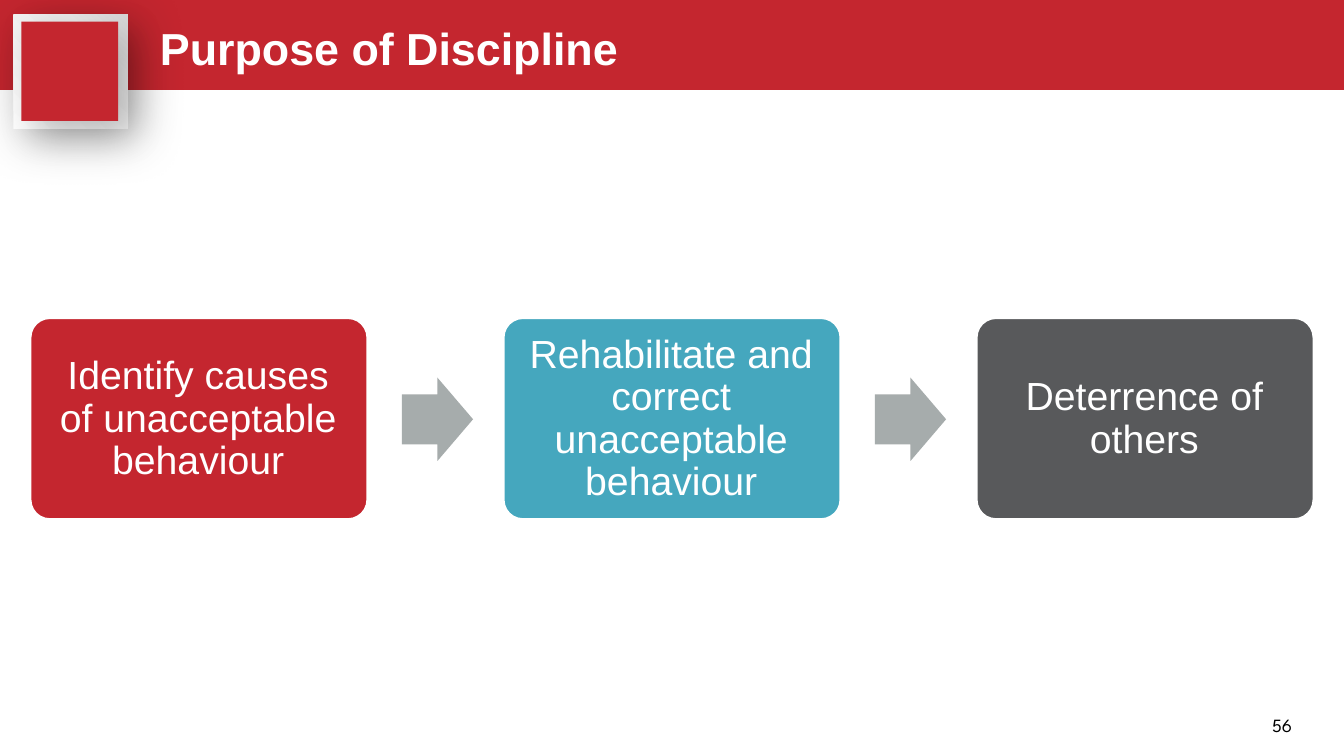
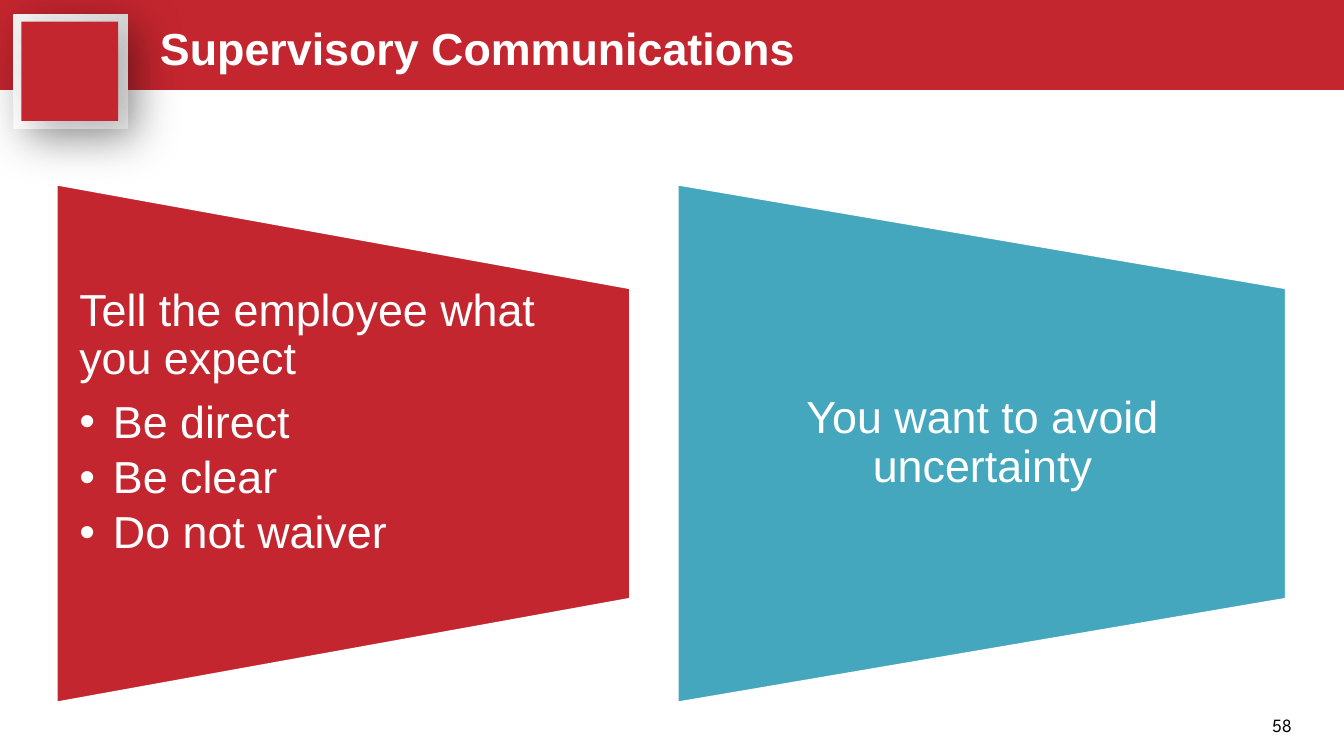
"""Build two discipline training slides: a three-step process and a pair of message panels."""
import lxml.etree
import pptx
import pptx.dml.color
import pptx.enum.shapes
import pptx.enum.text
import pptx.oxml
import pptx.oxml.ns
import pptx.util

PX = 9144
COLORS = {
    "red": "C4262F",
    "teal": "45A7BE",
    "charcoal": "58595B",
    "gray": "A6ACAC",
    "white": "FFFFFF",
    "black": "000000",
}
FRAME_STOPS = [(0, "FFFFFF"), (73, "ECECEC"), (100, "D9D9D9")]
SHAPES = pptx.enum.shapes.MSO_SHAPE
ALIGN = pptx.enum.text.PP_ALIGN
ANCHOR = pptx.enum.text.MSO_ANCHOR
NAMESPACE = pptx.oxml.ns.nsdecls("a")


def add_shape(page, kind, place, color, outlined=False, rotation=0, shadow=None):
    shape = page.shapes.add_shape(kind, *[value * PX for value in place])
    shape.rotation = rotation
    shape.shadow.inherit = False
    shape.fill.solid()
    shape.fill.fore_color.rgb = pptx.dml.color.RGBColor.from_string(COLORS[color])
    if outlined:
        shape.line.color.rgb = pptx.dml.color.RGBColor.from_string(COLORS["white"])
        shape.line.width = pptx.util.Pt(2)
    else:
        shape.line.fill.background()
    if shadow:
        alpha, blur, distance = shadow
        effects = shape._element.spPr.find(pptx.oxml.ns.qn("a:effectLst"))
        effects.append(pptx.oxml.parse_xml(
            f'<a:outerShdw {NAMESPACE} blurRad="{pptx.util.Pt(blur)}" '
            f'dist="{pptx.util.Pt(distance)}" dir="2700000" algn="tl" rotWithShape="0">'
            f'<a:srgbClr val="{COLORS["black"]}"><a:alpha val="{alpha * 1000}"/></a:srgbClr>'
            '</a:outerShdw>'))
    return shape


def write_text(box, lines, size, margins=(0, 0), align=ALIGN.LEFT, anchor=ANCHOR.MIDDLE,
               spacing=0.9, color="white", font="Arial", bold=False):
    frame = box.text_frame
    frame.word_wrap = True
    frame.vertical_anchor = anchor
    frame.margin_left = frame.margin_right = margins[0] * PX
    frame.margin_top = frame.margin_bottom = margins[1] * PX
    for index, line in enumerate(lines):
        para = frame.add_paragraph() if index else frame.paragraphs[0]
        if index:
            para.level = 1
            properties = para._p.get_or_add_pPr()
            properties.set("marL", str(25 * PX))
            properties.set("indent", str(-25 * PX))
            typeface = lxml.etree.SubElement(properties, pptx.oxml.ns.qn("a:buFont"))
            typeface.set("typeface", font)
            bullet = lxml.etree.SubElement(properties, pptx.oxml.ns.qn("a:buChar"))
            bullet.set("char", "•")
        para.alignment = align
        para.line_spacing = spacing
        if len(lines) > 1:
            para.space_after = pptx.util.Pt(3.6 if index else 8.4)
        span = para.add_run()
        span.text = line
        span.font.size = pptx.util.Pt(size)
        span.font.name = font
        span.font.bold = bold
        span.font.color.rgb = pptx.dml.color.RGBColor.from_string(COLORS[color])


deck = pptx.Presentation()
deck.slide_width = 1000 * PX
deck.slide_height = deck.slide_width * 9 // 16

pages = []
for title, number in [("Purpose of Discipline", "56"), ("Supervisory Communications", "58")]:
    page = deck.slides.add_slide(deck.slide_layouts[6])
    pages.append(page)
    add_shape(page, SHAPES.RECTANGLE, (0, 0, 1000, 67), "red")
    frame_tile = add_shape(page, SHAPES.RECTANGLE, (10, 11, 85, 85), "white",
                           rotation=270, shadow=(28, 28, 7))
    stops = "".join(f'<a:gs pos="{position * 1000}"><a:srgbClr val="{value}"/></a:gs>'
                    for position, value in FRAME_STOPS)
    gradient = pptx.oxml.parse_xml(
        f'<a:gradFill {NAMESPACE} rotWithShape="1"><a:gsLst>{stops}</a:gsLst>'
        '<a:lin ang="2700000" scaled="0"/></a:gradFill>')
    tile_properties = frame_tile._element.spPr
    tile_properties.replace(tile_properties.find(pptx.oxml.ns.qn("a:solidFill")), gradient)
    add_shape(page, SHAPES.RECTANGLE, (15, 17, 74, 72), "red", rotation=270, shadow=(25, 20, 9))
    title_box = page.shapes.add_textbox(119 * PX, 4 * PX, 852 * PX, 59 * PX)
    write_text(title_box, [title], 24, spacing=1.1, bold=True)
    number_box = page.shapes.add_textbox(937 * PX, 527 * PX, 34 * PX, 25 * PX)
    write_text(number_box, [number], 10, align=ALIGN.CENTER, spacing=1.0,
               color="black", font="League Spartan")

purpose_page, communication_page = pages

steps = [
    ("Identify causes of unacceptable behaviour", "red"),
    ("Rehabilitate and correct unacceptable behaviour", "teal"),
    ("Deterrence of others", "charcoal"),
]
for index, (label, color) in enumerate(steps):
    left = 22 + 352 * index
    step = add_shape(purpose_page, SHAPES.ROUNDED_RECTANGLE, (left, 236, 252, 151), color,
                     outlined=True)
    step.adjustments[0] = 0.1
    label_box = purpose_page.shapes.add_textbox((left + 4) * PX, 241 * PX, 243 * PX, 142 * PX)
    write_text(label_box, [label], 21, margins=(9, 9), align=ALIGN.CENTER)
    if index < len(steps) - 1:
        arrow = add_shape(purpose_page, SHAPES.RIGHT_ARROW, (left + 277, 281, 53, 62), "gray")
        arrow.adjustments[0] = 0.6
        arrow.adjustments[1] = 0.5

panels = [
    (42, 428, "red", ["Tell the employee what you expect", "Be direct", "Be clear", "Do not waiver"],
     ALIGN.LEFT, ANCHOR.TOP),
    (504, 454, "teal", ["You want to avoid uncertainty"], ALIGN.CENTER, ANCHOR.MIDDLE),
]
panel_height = 387
panel_middle = 330
for left, width, color, lines, align, anchor in panels:
    place = (left + (width - panel_height) // 2, panel_middle - width // 2, panel_height, width)
    add_shape(communication_page, SHAPES.FLOWCHART_MANUAL_OPERATION, place, color,
              outlined=True, rotation=270)
    panel_box = communication_page.shapes.add_textbox(left * PX, 214 * PX, width * PX, 232 * PX)
    write_text(panel_box, lines, 24, margins=(17, 0), align=align, anchor=anchor)

deck.save("out.pptx")
